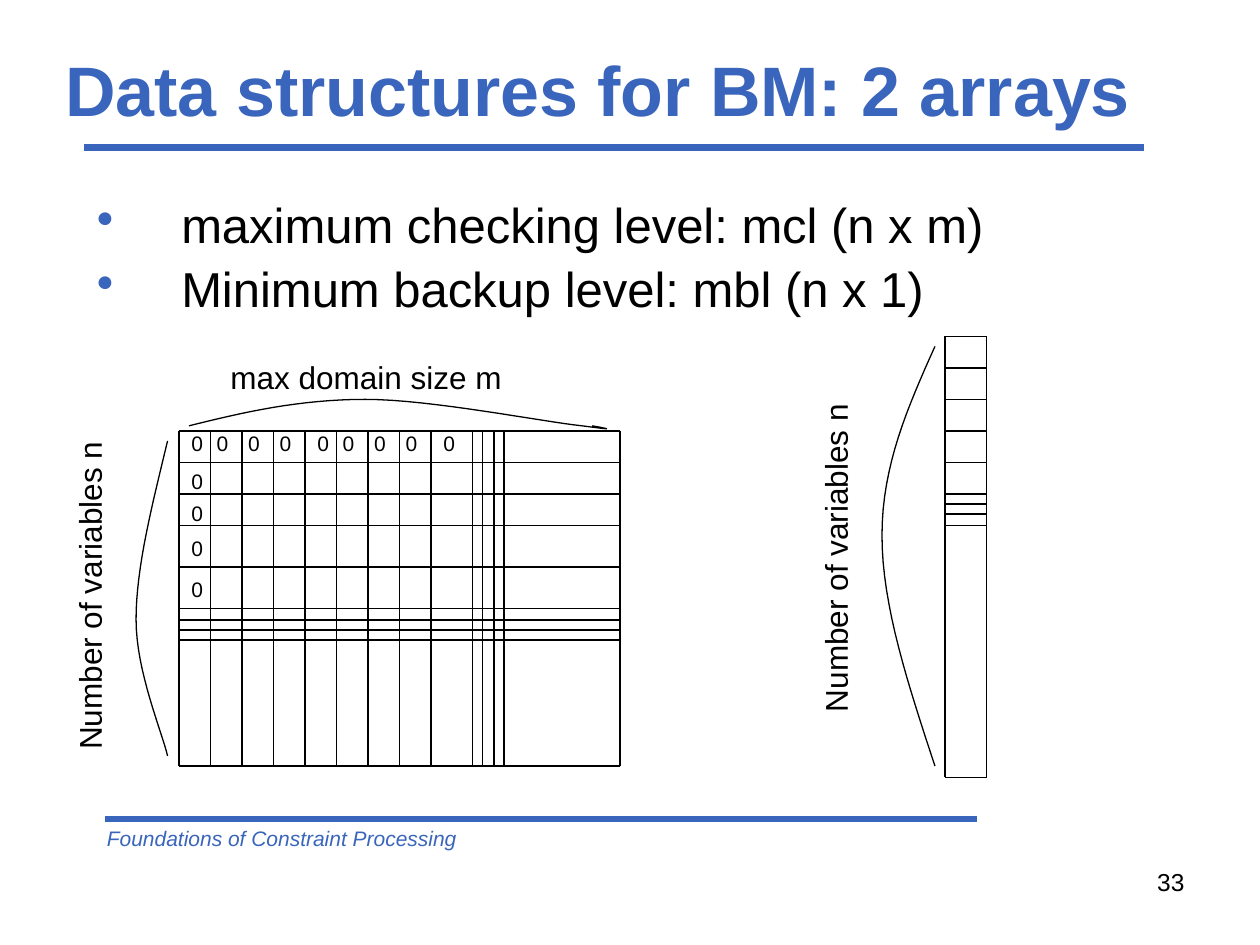
"""Build the slide on the two arrays used by backmarking."""
from lxml import etree
from pptx import Presentation
from pptx.dml.color import RGBColor
from pptx.enum.shapes import MSO_CONNECTOR
from pptx.enum.text import MSO_ANCHOR, MSO_AUTO_SIZE, PP_ALIGN
from pptx.oxml.ns import qn
from pptx.util import Inches, Pt

BLUE = RGBColor(0x3A, 0x65, 0xBC)
BLACK = RGBColor(0, 0, 0)
STRAIGHT = MSO_CONNECTOR.STRAIGHT
TOP, MIDDLE = MSO_ANCHOR.TOP, MSO_ANCHOR.MIDDLE
LEFT, RIGHT = PP_ALIGN.LEFT, PP_ALIGN.RIGHT
FIT_SHAPE = MSO_AUTO_SIZE.SHAPE_TO_FIT_TEXT
FIT_NONE = MSO_AUTO_SIZE.NONE
CURVE_STEPS = 16


def add_text(shapes, text, left, top, width, height, size=12, color=BLACK, bold=False,
             italic=False, align=LEFT, anchor=TOP, wrap=True, grow=False,
             upward=False, bullet=False):
    box = shapes.add_textbox(Inches(left), Inches(top), Inches(width), Inches(height))
    frame = box.text_frame
    frame.word_wrap = wrap
    frame.auto_size = FIT_SHAPE if grow else FIT_NONE
    frame.vertical_anchor = anchor
    if upward:
        box.rotation = 180
        frame._txBody.bodyPr.set("vert", "eaVert")
    frame.text = text
    for index, paragraph in enumerate(frame.paragraphs):
        if bullet:
            properties = paragraph._p.get_or_add_pPr()
            properties.set("marL", str(Inches(0.67)))
            properties.set("indent", str(-Inches(0.67)))
            bullet_color = etree.SubElement(properties, qn("a:buClr"))
            etree.SubElement(bullet_color, qn("a:srgbClr")).set("val", str(BLUE))
            etree.SubElement(properties, qn("a:buChar")).set("char", "•")
            paragraph.line_spacing = 0.9
            if index:
                paragraph.space_before = Pt(6)
        paragraph.alignment = align
        for run in paragraph.runs:
            run.font.name = "Arial"
            run.font.size = Pt(size)
            run.font.bold = bold
            run.font.italic = italic
            run.font.color.rgb = color


def add_line(shapes, x1, y1, x2, y2, color=BLACK, weight=0.75):
    line = shapes.add_connector(STRAIGHT, Inches(x1), Inches(y1), Inches(x2), Inches(y2))
    line.line.color.rgb = color
    line.line.width = Pt(weight)
    etree.SubElement(line._element.spPr, qn("a:effectLst"))


presentation = Presentation()
presentation.slide_width = Inches(10)
presentation.slide_height = Inches(7.5)
slide = presentation.slides.add_slide(presentation.slide_layouts[6])

add_line(slide.shapes, 0.67, 1.17, 9.08, 1.17, BLUE, 4)
add_line(slide.shapes, 0.83, 6.5, 7.75, 6.5, BLUE, 4)
add_text(slide.shapes, "Foundations of Constraint Processing", 0.75, 6.5, 5.25, 0.3,
         color=BLUE, italic=True, grow=True)
add_text(slide.shapes, "33", 7.17, 6.83, 2.33, 0.52, size=14, align=RIGHT)
add_text(slide.shapes, "Data structures for BM: 2 arrays", 0.42, 0.33, 9, 0.75,
         size=40, color=BLUE, bold=True, anchor=MIDDLE)

level_array = slide.shapes.add_group_shape().shapes
backup_array = slide.shapes.add_group_shape().shapes

level_columns = [1.42 + 0.25 * step for step in range(9)]
level_columns += [3.75, 3.83, 3.92, 4, 4.92]
level_rows = [3.42, 3.67, 3.92, 4.17, 4.5, 4.83, 4.92, 5, 5.08, 6.08]
backup_rows = [2.67 + 0.25 * step for step in range(6)] + [4, 4.08, 4.17, 6.17]
grids = [
    (level_array, level_columns, level_rows),
    (backup_array, [7.5, 7.83], backup_rows),
]
for shapes, columns, rows in grids:
    for x in columns:
        add_line(shapes, x, rows[0], x, rows[-1])
    for y in rows:
        add_line(shapes, columns[0], y, columns[-1], y)

zero_places = [(x, 3.37) for x in (1.42, 1.62, 1.87, 2.12, 2.42, 2.62, 2.87, 3.12, 3.42)]
zero_places += [(1.42, y) for y in (3.67, 3.92, 4.2, 4.53)]
for x, y in zero_places:
    add_text(level_array, "0", x, y, 0.29, 0.3, wrap=False, grow=True)

braces = [
    (level_array, [(1.33, 3.5), (1.21, 4), (1.08, 4.5), (1.08, 4.92),
                   (1.08, 5.33), (1.29, 5.82), (1.33, 6)]),
    (level_array, [(1.5, 3.38), (1.94, 3.27), (2.38, 3.17), (2.9, 3.17),
                   (3.42, 3.17), (4.32, 3.35), (4.62, 3.38),
                   (4.92, 3.42), (4.81, 3.4), (4.7, 3.38)]),
    (backup_array, [(7.42, 2.75), (7.21, 3.22), (7, 3.69), (7, 4.25),
                    (7, 4.81), (7.21, 5.44), (7.42, 6.08)]),
]
for shapes, controls in braces:
    points = []
    for first in range(0, len(controls) - 1, 3):
        segment = controls[first:first + 4]
        for step in range(1, CURVE_STEPS + 1):
            t = step / CURVE_STEPS
            weights = ((1 - t) ** 3, 3 * t * (1 - t) ** 2, 3 * t ** 2 * (1 - t), t ** 3)
            x = sum(weight * point[0] for weight, point in zip(weights, segment))
            y = sum(weight * point[1] for weight, point in zip(weights, segment))
            points.append((Inches(x), Inches(y)))
    start_x, start_y = controls[0]
    builder = shapes.build_freeform(Inches(start_x), Inches(start_y))
    builder.add_line_segments(points, close=False)
    brace = builder.convert_to_shape()
    brace.shadow.inherit = False
    brace.fill.background()
    brace.line.color.rgb = BLACK
    brace.line.width = Pt(0.75)

add_text(level_array, "max domain size m", 1.73, 2.79, 2.35, 0.4,
         size=18, wrap=False, grow=True)
for shapes, left, top in ((level_array, 0.51, 3.5), (backup_array, 6.43, 3.2)):
    add_text(shapes, "Number of variables n", left, top, 0.5, 2.55,
             size=18, wrap=False, grow=True, upward=True)

add_text(slide.shapes,
         "maximum checking level: mcl (n x m)\nMinimum backup level: mbl (n x 1)",
         0.67, 1.55, 8.75, 1.2, size=28, bullet=True)

presentation.save("out.pptx")
